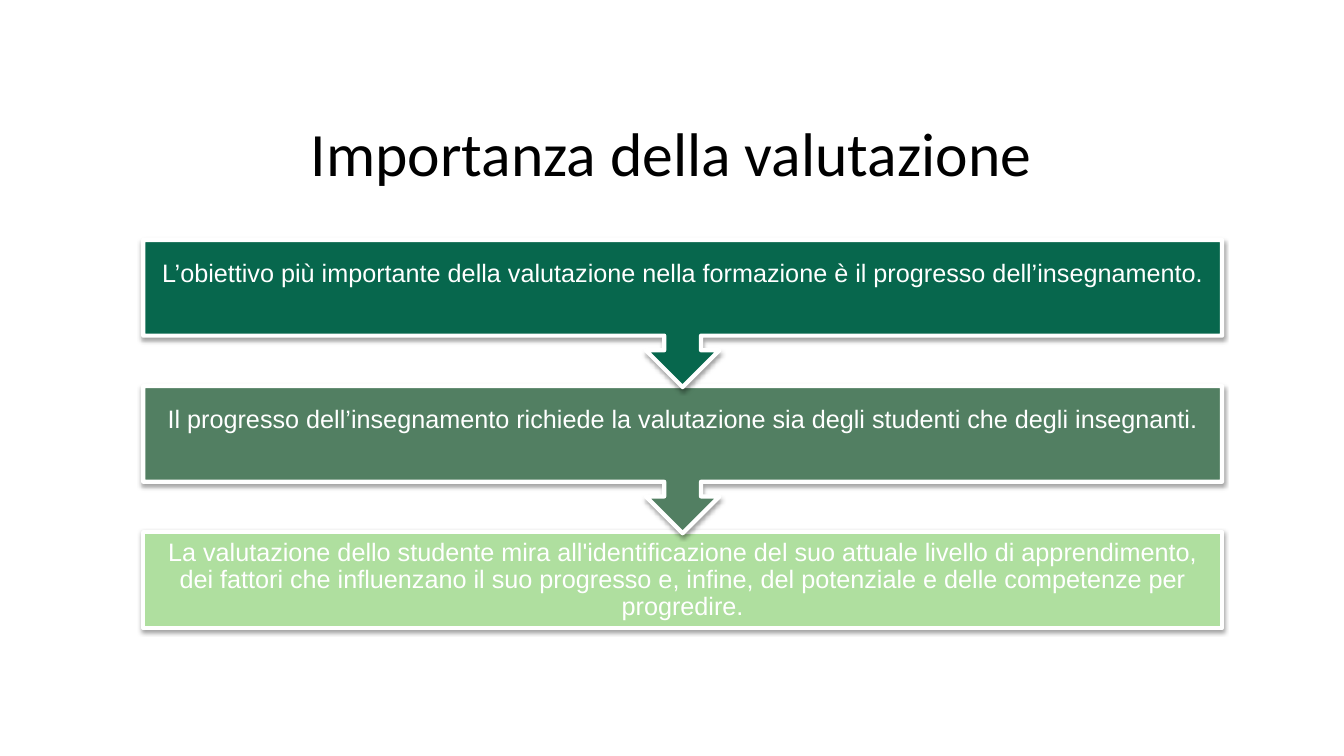
from lxml.etree import SubElement
from pptx import Presentation
from pptx.dml.color import RGBColor
from pptx.enum.shapes import MSO_SHAPE
from pptx.enum.text import MSO_ANCHOR, PP_ALIGN
from pptx.oxml.ns import qn
from pptx.util import Inches, Pt

BLACK = RGBColor(0x00, 0x00, 0x00)
WHITE = RGBColor(0xFF, 0xFF, 0xFF)
DARK = RGBColor(0x07, 0x67, 0x4D)
MID = RGBColor(0x52, 0x7F, 0x62)
LIGHT = RGBColor(0xAF, 0xDF, 0x9F)

LEFT, TOP, WIDTH = 1.42, 2.38, 10.7
BOX, CALL, STEP = 0.95, 1.46, 1.45
PAD, LIFT = 0.14, 0.27

STEPS = [
    ("L’obiettivo più importante della valutazione nella formazione "
     "è il progresso dell’insegnamento.", DARK),
    ("Il progresso dell’insegnamento richiede la valutazione sia degli "
     "studenti che degli insegnanti.", MID),
    ("La valutazione dello studente mira all'identificazione del suo attuale "
     "livello di apprendimento, dei fattori che influenzano il suo progresso "
     "e, infine, del potenziale e delle competenze per progredire.", LIGHT),
]


class Deck:
    def __init__(self):
        self.show = Presentation()
        self.show.slide_width = Inches(13.33)
        self.show.slide_height = Inches(7.5)
        self.slide = self.show.slides.add_slide(self.show.slide_layouts[6])

    def text(self, words, box, size, font, color, pads):
        """Add centred text; pads are left, top, right, bottom."""
        frame = self.slide.shapes.add_textbox(*map(Inches, box)).text_frame
        frame.word_wrap = True
        frame.vertical_anchor = MSO_ANCHOR.MIDDLE
        (frame.margin_left, frame.margin_top,
         frame.margin_right, frame.margin_bottom) = map(Inches, pads)
        frame.text = words
        para = frame.paragraphs[0]
        para.alignment = PP_ALIGN.CENTER
        para.line_spacing = 0.9
        style = para.runs[0].font
        style.size, style.name = Pt(size), font
        style.color.rgb = color

    def panel(self, kind, box, fill):
        shape = self.slide.shapes.add_shape(kind, *map(Inches, box))
        shape.fill.solid()
        shape.fill.fore_color.rgb = fill
        shape.line.color.rgb = WHITE
        shape.line.width = Pt(3)
        self.shade(shape)
        return shape

    def shade(self, shape):
        """Give the shape a soft shadow straight below it."""
        shape.shadow.inherit = False
        effects = shape._element.spPr.find(qn("a:effectLst"))
        outer = SubElement(effects, qn("a:outerShdw"), blurRad=str(Pt(3.1)),
                           dist=str(Pt(1.6)), dir="5400000", rotWithShape="0")
        color = SubElement(outer, qn("a:srgbClr"), val="000000")
        SubElement(color, qn("a:alpha"), val="37000")

    def callout(self, box, fill):
        """Add a panel whose arrow points down to the next one."""
        shape = self.panel(MSO_SHAPE.UP_ARROW_CALLOUT, box, fill)
        shape.rotation = 180
        for i, value in enumerate((0.25, 0.25, 0.25, 0.65)):
            shape.adjustments[i] = value

    def step(self, index, words, fill, last):
        top = TOP + index * STEP
        if last:
            self.panel(MSO_SHAPE.RECTANGLE, (LEFT, top, WIDTH, BOX), fill)
        else:
            self.callout((LEFT, top, WIDTH, CALL), fill)
        base = PAD if last else PAD + LIFT
        self.text(words, (LEFT, top, WIDTH, BOX), 18, "Arial", WHITE,
                  (PAD, PAD, PAD, base))


def main():
    deck = Deck()
    deck.text("Importanza della valutazione", (0.91, 0.91, 11.5, 1.29),
              44, "Calibri", BLACK, (0.1, 0.05, 0.1, 0.05))
    # Later steps go first so that each arrow tip lies over the next panel.
    for index, (words, fill) in reversed(list(enumerate(STEPS))):
        deck.step(index, words, fill, index == len(STEPS) - 1)
    deck.show.save("out.pptx")


if __name__ == "__main__":
    main()
